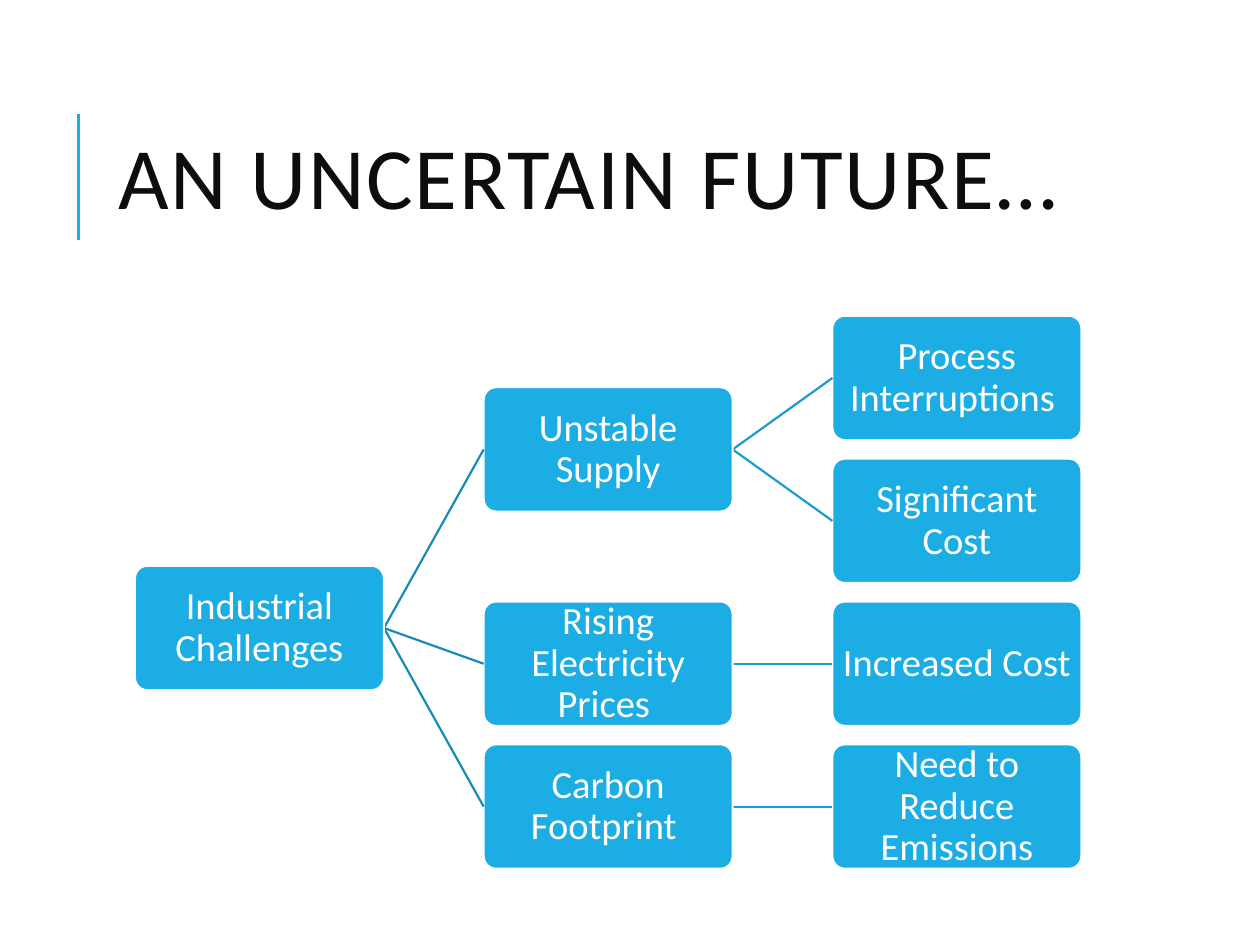
import pptx
import pptx.util
import pptx.dml.color
import pptx.enum.shapes
import pptx.enum.text
from lxml import etree
from pptx.util import Cm, Pt

BLUE, WHITE, INK = "1CADE4", "FFFFFF", "0D0D0D"
EDGES = ["168BB7", "199DCF"]  # line colour by tree level

# Tree grid
LEFT, STEP_X = 2.72, 7.03
MID_Y, STEP_Y = 7.62, 2.88  # centre of the first leaf, leaf pitch
WIDE, HIGH = 5.02, 2.51

TREE = ("Industrial Challenges", [
    ("Unstable Supply", [
        ("Process Interruptions ", []),
        ("Significant Cost", []),
    ]),
    ("Rising Electricity Prices ", [("Increased Cost", [])]),
    ("Carbon Footprint ", [("Need to Reduce Emissions", [])]),
])


def color(code):
    return pptx.dml.color.RGBColor.from_string(code)


class Deck:
    font = "Calibri"

    def __init__(self):
        self.prs = pptx.Presentation()
        self.prs.slide_width, self.prs.slide_height = Cm(25.4), Cm(19.05)
        self.slide = self.prs.slides.add_slide(self.prs.slide_layouts[5])

    def style(self, para, size, code, align, gap):
        para.font.name, para.font.size = self.font, Pt(size)
        para.font.color.rgb = color(code)
        para.alignment, para.line_spacing = align, gap

    def title(self, text, left, top, width, height):
        box = self.slide.shapes.title
        box.left, box.top = Cm(left), Cm(top)
        box.width, box.height = Cm(width), Cm(height)
        frame = box.text_frame
        frame.text = text
        frame.auto_size = pptx.enum.text.MSO_AUTO_SIZE.NONE
        frame.vertical_anchor = pptx.enum.text.MSO_ANCHOR.MIDDLE
        para = frame.paragraphs[0]
        self.style(para, 50, INK, pptx.enum.text.PP_ALIGN.LEFT, 0.8)
        para.runs[0].font._element.set("spc", "100")

    def line(self, x1, y1, x2, y2, code, width=1.25):
        kind = pptx.enum.shapes.MSO_CONNECTOR.STRAIGHT
        link = self.slide.shapes.add_connector(
            kind, Cm(x1), Cm(y1), Cm(x2), Cm(y2))
        link.line.color.rgb, link.line.width = color(code), Pt(width)
        etree.SubElement(link._element.spPr, pptx.oxml.ns.qn("a:effectLst"))

    def node(self, text, left, mid):
        kind = pptx.enum.shapes.MSO_SHAPE.ROUNDED_RECTANGLE
        box = self.slide.shapes.add_shape(
            kind, Cm(left), Cm(mid - HIGH / 2), Cm(WIDE), Cm(HIGH))
        box.adjustments[0] = 0.1
        box.shadow.inherit = False
        box.fill.solid()
        box.fill.fore_color.rgb = color(BLUE)
        box.line.color.rgb, box.line.width = color(WHITE), Pt(1.25)
        frame = box.text_frame
        frame.text, frame.word_wrap = text, True
        frame.vertical_anchor = pptx.enum.text.MSO_ANCHOR.MIDDLE
        frame.margin_left = frame.margin_right = Cm(0.04)
        frame.margin_top = frame.margin_bottom = Cm(0.04)
        self.style(frame.paragraphs[0], 22, WHITE,
                   pptx.enum.text.PP_ALIGN.CENTER, 0.9)

    def tree(self, item, level=0, row=0):
        """Draw a branch; return its centre and the next free leaf row."""
        text, kids = item
        left, mids = LEFT + level * STEP_X, []
        mid = MID_Y + row * STEP_Y
        for kid in kids:
            spot, row = self.tree(kid, level + 1, row)
            mids.append(spot)
        if kids:
            mid = (mids[0] + mids[-1]) / 2
        else:
            row += 1
        for spot in mids:
            self.line(left + WIDE, mid, left + STEP_X, spot, EDGES[level])
        self.node(text, left, mid)
        return mid, row


def main():
    deck = Deck()
    # Heading with its accent rule
    deck.line(1.58, 4.83, 1.58, 2.29, BLUE, 1.5)
    deck.title("AN UNCERTAIN FUTURE…", 2.13, 1.63, 20.24, 4.17)
    # Challenge tree
    deck.tree(TREE)
    deck.prs.save("out.pptx")


if __name__ == "__main__":
    main()
